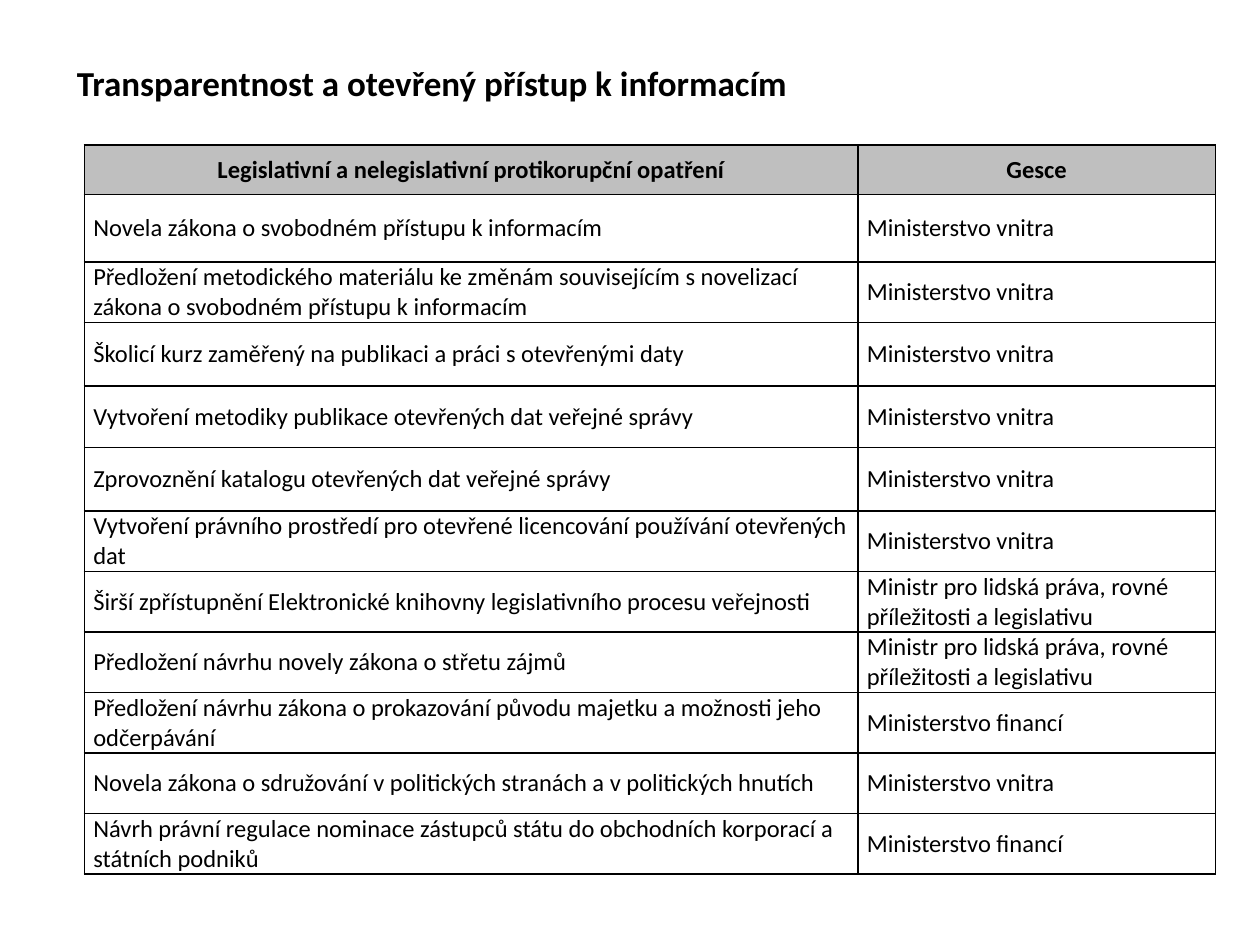
from dataclasses import dataclass

from lxml.etree import SubElement
from pptx import Presentation
from pptx.dml.color import RGBColor
from pptx.enum.text import MSO_ANCHOR, PP_ALIGN
from pptx.oxml.ns import qn
from pptx.util import Cm, Pt


@dataclass(frozen=True)
class Theme:
    font: str = "Calibri"
    title_size: int = 20
    table_size: int = 14
    text: str = "000000"
    header: str = "BFBFBF"
    border: str = "000000"
    border_width: int = 1


THEME = Theme()

TITLE = "Transparentnost a otevřený přístup k informacím"
HEADER = ("Legislativní a nelegislativní protikorupční opatření", "Gesce")
INTERIOR = "Ministerstvo vnitra"
FINANCE = "Ministerstvo financí"
LEGISLATION = "Ministr pro lidská práva, rovné příležitosti a legislativu"

# Measure, responsible body, row height in cm
MEASURES = [
    ("Novela zákona o svobodném přístupu k informacím", INTERIOR, 1.36),
    ("Předložení metodického materiálu ke změnám souvisejícím s novelizací "
     "zákona o svobodném přístupu k informacím", INTERIOR, 1.22),
    ("Školicí kurz zaměřený na publikaci a práci s otevřenými daty", INTERIOR, 1.28),
    ("Vytvoření metodiky publikace otevřených dat veřejné správy", INTERIOR, 1.24),
    ("Zprovoznění katalogu otevřených dat veřejné správy", INTERIOR, 1.28),
    ("Vytvoření právního prostředí pro otevřené licencování používání "
     "otevřených dat", INTERIOR, 1.22),
    ("Širší zpřístupnění Elektronické knihovny legislativního procesu "
     "veřejnosti", LEGISLATION, 1.22),
    ("Předložení návrhu novely zákona o střetu zájmů", LEGISLATION, 1.22),
    ("Předložení návrhu zákona o prokazování původu majetku a možnosti jeho "
     "odčerpávání", FINANCE, 1.22),
    ("Novela zákona o sdružování v politických stranách a v politických "
     "hnutích", INTERIOR, 1.22),
    ("Návrh právní regulace nominace zástupců státu do obchodních korporací "
     "a státních podniků", FINANCE, 1.22),
]
HEADER_HEIGHT = 1
COLUMN_SHARES = (0.684, 0.316)


def style_font(p, size, bold=False):
    p.font.name = THEME.font
    p.font.size = Pt(size)
    p.font.bold = bold
    p.font.color.rgb = RGBColor.from_string(THEME.text)


def add_title(slide, left, top, width, height):
    tf = slide.shapes.add_textbox(left, top, width, height).text_frame
    tf.word_wrap = True
    p = tf.paragraphs[0]
    p.text = TITLE
    style_font(p, THEME.title_size, bold=True)


def add_borders(cell):
    """Draw all four cell edges; must run before the fill is set."""
    tc_pr = cell._tc.get_or_add_tcPr()
    for edge in ("a:lnL", "a:lnR", "a:lnT", "a:lnB"):
        ln = SubElement(tc_pr, qn(edge), w=str(Pt(THEME.border_width)))
        fill = SubElement(ln, qn("a:solidFill"))
        SubElement(fill, qn("a:srgbClr"), val=THEME.border)


def fill_cell(cell, text, is_header):
    add_borders(cell)
    if is_header:
        cell.fill.solid()
        cell.fill.fore_color.rgb = RGBColor.from_string(THEME.header)
    else:
        cell.fill.background()
    cell.vertical_anchor = MSO_ANCHOR.MIDDLE
    cell.margin_left = cell.margin_right = Cm(0.18)
    cell.margin_top = cell.margin_bottom = 0
    p = cell.text_frame.paragraphs[0]
    p.text = text
    p.alignment = PP_ALIGN.CENTER if is_header else PP_ALIGN.LEFT
    style_font(p, THEME.table_size, bold=is_header)


def add_measures_table(slide, left, top, width):
    rows = [(*HEADER, HEADER_HEIGHT), *MEASURES]
    height = Cm(sum(row[-1] for row in rows))
    table = slide.shapes.add_table(
        len(rows), len(HEADER), left, top, width, height).table
    table.horz_banding = False
    for column, share in zip(table.columns, COLUMN_SHARES):
        column.width = int(width * share)
    for i, (*texts, row_height) in enumerate(rows):
        table.rows[i].height = Cm(row_height)
        for j, text in enumerate(texts):
            fill_cell(table.cell(i, j), text, is_header=i == 0)


def main():
    prs = Presentation()
    prs.slide_width, prs.slide_height = Cm(25.4), Cm(19.05)
    slide = prs.slides.add_slide(prs.slide_layouts[6])
    add_title(slide, Cm(1.3), Cm(1.12), Cm(22.86), Cm(12.57))
    add_measures_table(slide, Cm(1.7), Cm(2.92), Cm(22.8))
    prs.save("out.pptx")


if __name__ == "__main__":
    main()
